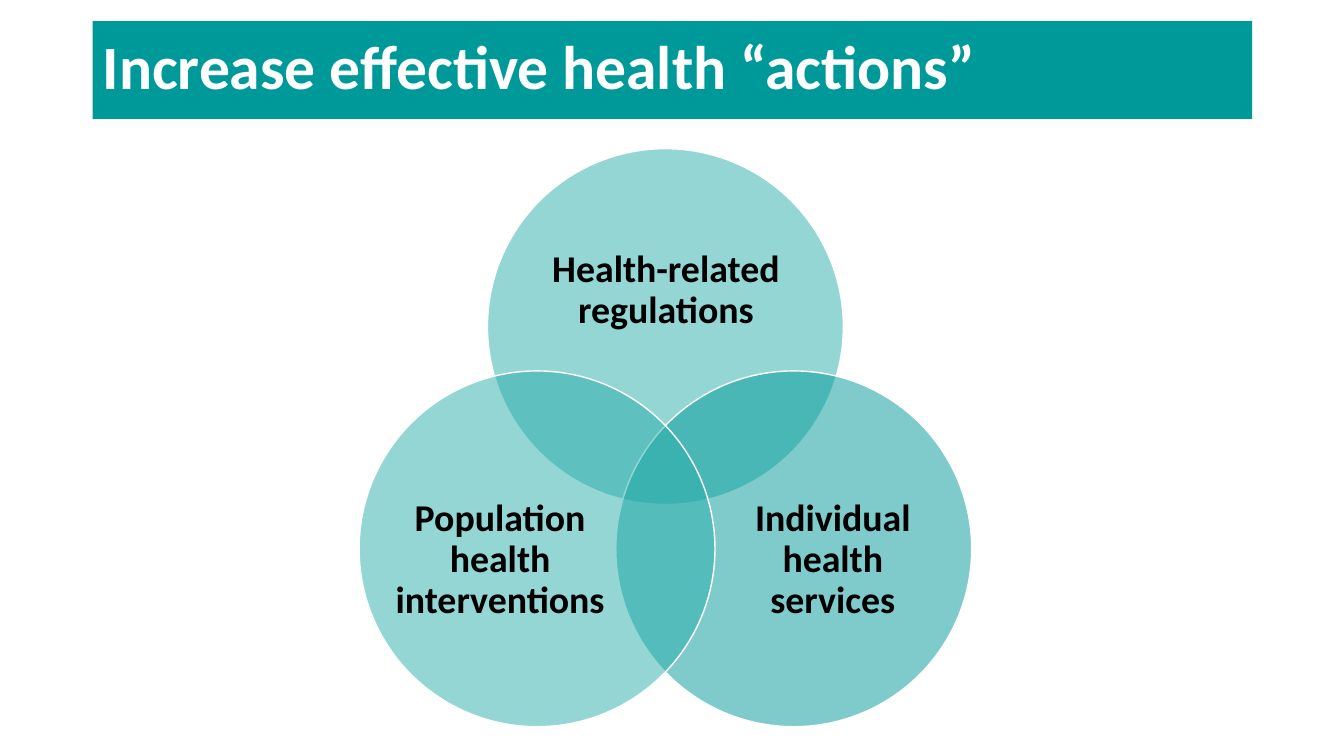
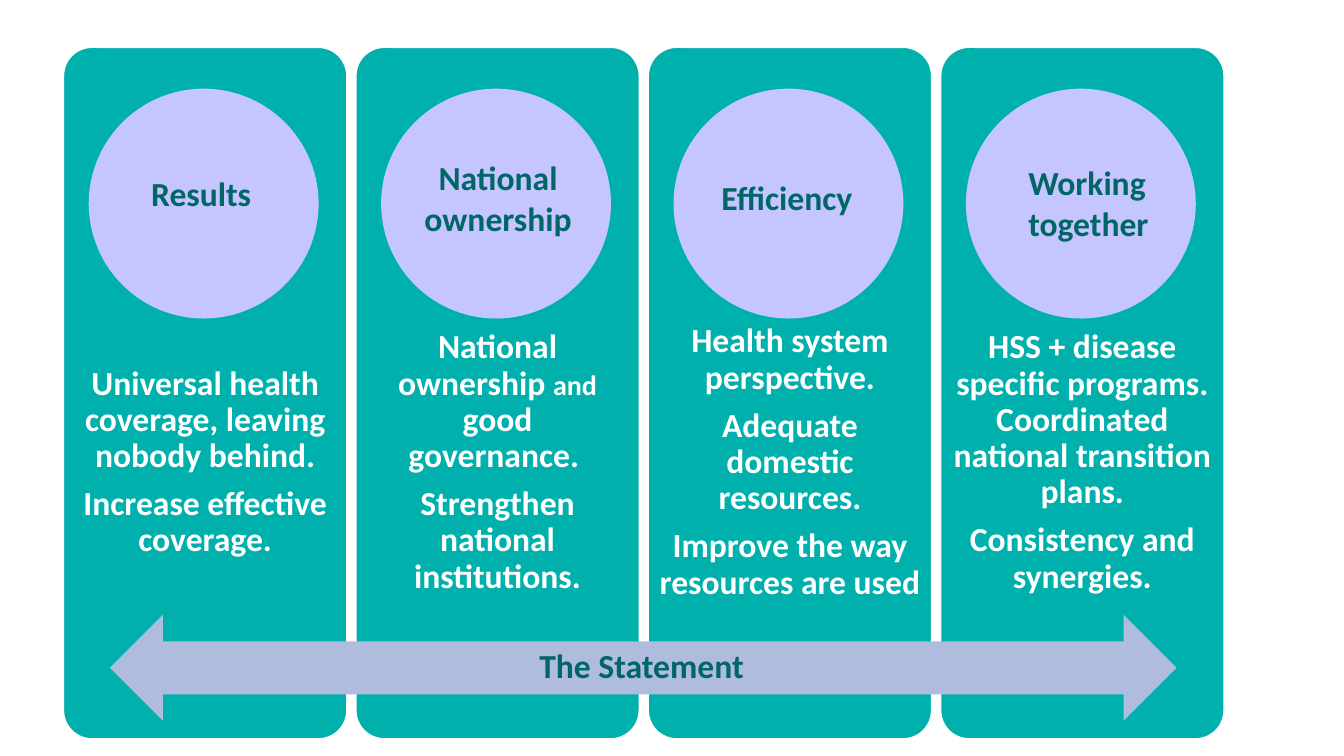
from dataclasses import dataclass
from math import cos, radians, sin

from lxml.etree import SubElement
from pptx import Presentation
from pptx.dml.color import RGBColor as Rgb
from pptx.enum.shapes import MSO_SHAPE as Kind
from pptx.enum.text import MSO_ANCHOR as Anchor, PP_ALIGN as Align
from pptx.oxml.ns import qn
from pptx.util import Pt

SCALE = 9144  # EMU in one px, 100 px to the inch


@dataclass(frozen=True)
class Theme:
    font: str = "Calibri"
    white: str = "FFFFFF"
    black: str = "000000"
    band: str = "009999"
    mint: str = "2BAEAB"
    card: str = "00B0AC"
    disc: str = "C5C5FF"
    arrow: str = "B0BCDE"
    ink: str = "006666"
    title: int = 44
    venn: int = 27
    body: int = 24
    small: int = 20


T = Theme()


def px(n):
    return round(n * SCALE)


def put(item, **vals):
    for name, val in vals.items():
        setattr(item, name, val)


class Deck:
    def __init__(self):
        self.prs = Presentation()
        put(self.prs, slide_width=px(1333), slide_height=px(750))
        self.page = None

    def new(self):
        self.page = self.prs.slides.add_slide(self.prs.slide_layouts[6])

    def shape(self, kind, box, fill, edge=None, alpha=None, adj=None):
        item = self.page.shapes.add_shape(kind, *map(px, box))
        item.shadow.inherit = False
        item.fill.solid()
        item.fill.fore_color.rgb = Rgb.from_string(fill)
        if alpha:
            tone = item.fill._xPr.find(qn("a:solidFill"))[0]
            SubElement(tone, qn("a:alpha"), val=str(alpha * 1000))
        if edge:
            item.line.color.rgb = Rgb.from_string(edge)
            item.line.width = Pt(1)
        else:
            item.line.fill.background()
        if adj:
            item.adjustments[0] = adj
        return item

    def words(self, item, paras, size, tone, pad=(10, 5), wrap=True,
              anchor=Anchor.MIDDLE, **form):
        """Fill item; a paragraph is a string or a list of (text, size) runs."""
        frame = item.text_frame
        side, top = map(px, pad)
        put(frame, word_wrap=wrap, vertical_anchor=anchor, margin_left=side,
            margin_right=side, margin_top=top, margin_bottom=top)
        for i, runs in enumerate(paras):
            para = frame.add_paragraph() if i else frame.paragraphs[0]
            put(para, **form)
            for text, pts in [(runs, size)] if isinstance(runs, str) else runs:
                run = para.add_run()
                run.text = text
                put(run.font, name=T.font, size=Pt(pts), bold=True)
                run.font.color.rgb = Rgb.from_string(tone)

    def text(self, box, paras, size, tone, **form):
        item = self.page.shapes.add_textbox(*map(px, box))
        self.words(item, paras, size, tone, **form)

    def block(self, box, paras, size, tone, pad):
        """Centred text with tight lines and a gap after each paragraph."""
        self.text(box, paras, size, tone, pad=(pad, pad),
                  alignment=Align.CENTER, line_spacing=0.9,
                  space_after=Pt(size * 0.35))

    def label(self, box, lines, align=Align.CENTER):
        self.text(box, lines, T.body, T.ink, wrap=False, anchor=Anchor.TOP,
                  alignment=align)

    def title(self, text):
        band = self.shape(Kind.RECTANGLE, (92, 21, 1150, 97), T.band)
        self.words(band, [text], T.title, T.white, alignment=Align.LEFT,
                   line_spacing=0.9)


def venn(deck):
    deck.new()
    size, reach, mid_x, mid_y = 353, 147, 660, 471
    rings = [
        (-90, T.mint, "Health-related regulations", (531, 209, 259, 159)),
        (30, T.band, "Individual health services", (720, 459, 212, 194)),
        (150, T.mint, "Population health interventions", (390, 459, 212, 194)),
    ]
    for turn, fill, text, box in rings:
        left = mid_x + reach * cos(radians(turn)) - size / 2
        top = mid_y + reach * sin(radians(turn)) - size / 2
        deck.shape(Kind.OVAL, (left, top, size, size), fill, T.white, 50)
        deck.block(box, [text], T.venn, T.black, 0)
    deck.title("Increase effective health “actions”")


def pillars(deck):
    deck.new()
    left, step, wide, disc = 63, 290, 281, 228
    cards = [
        (["Results"], (140, 167, 121, 50), Align.LEFT, 19,
         ["Universal health coverage, leaving nobody behind.",
          "Increase effective coverage."]),
        (["National", "ownership"], (410, 151, 168, 91), Align.CENTER, 19,
         [[("National ownership ", T.body), ("and ", T.small),
           ("good governance. ", T.body)],
          "Strengthen national institutions."]),
        (["Efficiency"], (704, 171, 153, 50), Align.CENTER, 7,
         ["Health system perspective.", "Adequate domestic resources.",
          "Improve the way resources are used"]),
        (["Working", "together"], (1010, 156, 141, 91), Align.LEFT, 7,
         ["HSS + disease specific programs. "
          "Coordinated national transition plans.",
          "Consistency and synergies."]),
    ]
    for i, (name, spot, align, pad, body) in enumerate(cards):
        x = left + i * step
        deck.shape(Kind.ROUNDED_RECTANGLE, (x, 47, wide, 686), T.card,
                   T.white, adj=0.1)
        deck.block((x, 322, wide, 274), body, T.body, T.white, pad)
        deck.shape(Kind.OVAL, (x + 25, 88, disc, disc), T.disc)
        deck.label(spot, name, align)
    deck.shape(Kind.LEFT_RIGHT_ARROW, (109, 610, 1058, 105), T.arrow)
    deck.label((525, 635, 225, 50), ["The Statement"], Align.LEFT)


def main():
    deck = Deck()
    venn(deck)
    pillars(deck)
    deck.prs.save("out.pptx")


if __name__ == "__main__":
    main()
